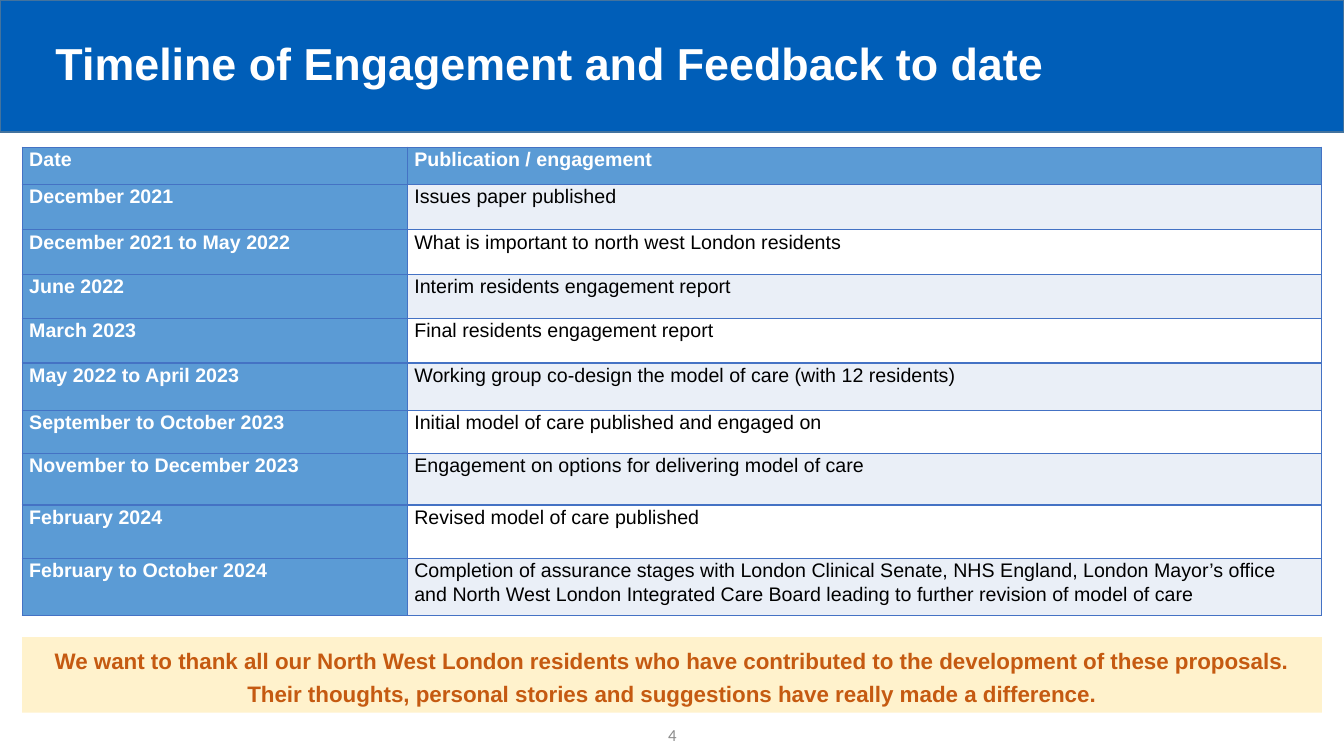
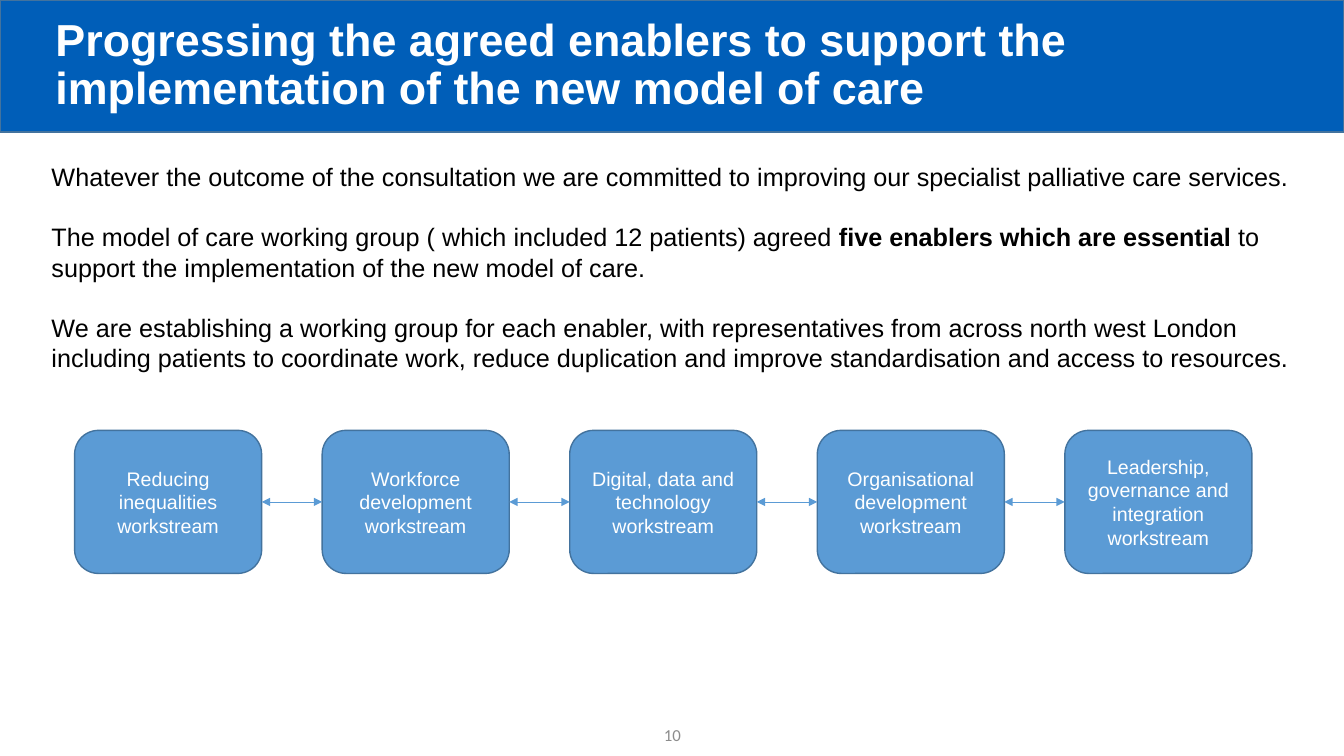
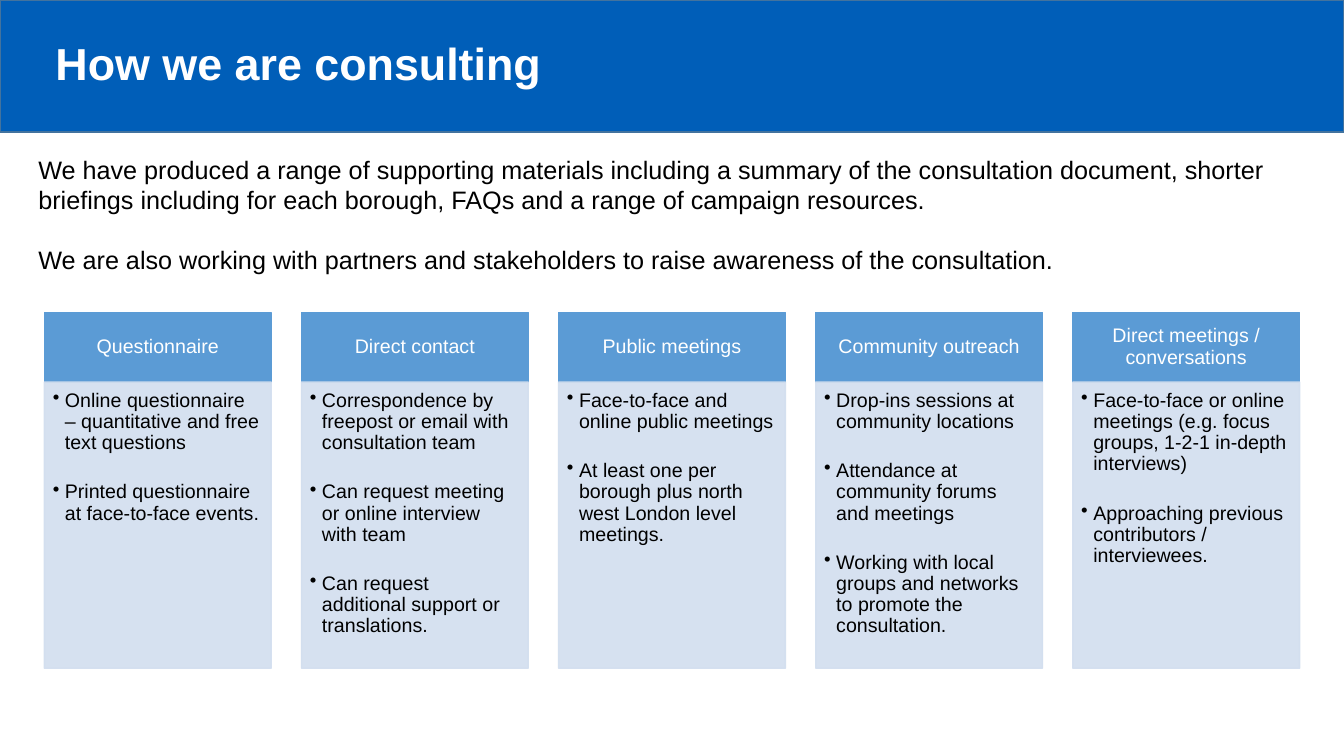
"""Build three slides on a consultation about palliative care."""
from pptx import Presentation
from pptx.dml.color import RGBColor
from pptx.enum.shapes import MSO_CONNECTOR, MSO_SHAPE
from pptx.enum.text import MSO_ANCHOR, MSO_AUTO_SIZE, PP_ALIGN
from pptx.oxml.ns import qn
from pptx.util import Inches, Pt
from lxml.etree import SubElement

WIDE, HIGH = Inches(13.33), Inches(7.5)
INK = {
    "band": "005EB8", "edge": "43739E", "blue": "5B9BD5", "pale": "D2DEEF",
    "stripe": "EAEFF7", "rule": "4472C4", "cream": "FFF2CC", "rust": "C55A11",
    "grey": "8C8C8C", "white": "FFFFFF", "black": "000000",
}
EVENTS = [
    ("Date", "Publication / engagement", 4.93),
    ("December 2021", "Issues paper published", 6),
    ("December 2021 to May 2022", "What is important to north west London residents", 5.87),
    ("June 2022", "Interim residents engagement report", 5.87),
    ("March 2023", "Final residents engagement report", 5.87),
    ("May 2022 to April 2023", "Working group co-design the model of care (with 12 residents)", 6.27),
    ("September to October 2023", "Initial model of care published and engaged on", 5.73),
    ("November to December 2023", "Engagement on options for delivering model of care", 6.8),
    ("February 2024", "Revised model of care published", 7.07),
    ("February to October 2024", "Completion of assurance stages with London Clinical Senate, NHS England, "
     "London Mayor’s office and North West London Integrated Care Board leading to further revision "
     "of model of care", 7.6),
]
THANKS = ("We want to thank all our North West London residents who have contributed to the development "
          "of these proposals. Their thoughts, personal stories and suggestions have really made a difference.")
AIMS = [
    "Whatever the outcome of the consultation we are committed to improving our specialist palliative "
    "care services.",
    "The model of care working group ( which included 12 patients) agreed *five enablers which are "
    "essential *to support the implementation of the new model of care.",
    "We are establishing a working group for each enabler, with representatives from across north west "
    "London including patients to coordinate work, reduce duplication and improve standardisation and "
    "access to resources.",
]
STREAMS = ["Reducing inequalities", "Workforce development", "Digital, data and technology",
           "Organisational development", "Leadership, governance and integration"]
REACH = [
    "We have produced a range of supporting materials including a summary of the consultation document, "
    "shorter briefings including for each borough, FAQs and a range of campaign resources.",
    "We are also working with partners and stakeholders to raise awareness of the consultation.",
]
WAYS = {
    "Questionnaire": ["Online questionnaire – quantitative and free text questions",
                      "Printed questionnaire at face-to-face events."],
    "Direct contact": ["Correspondence by freepost or email with consultation team",
                       "Can request meeting or online interview with team",
                       "Can request additional support or translations."],
    "Public meetings": ["Face-to-face and online public meetings",
                        "At least one per borough plus north west London level meetings."],
    "Community outreach": ["Drop-ins sessions at community locations",
                           "Attendance at community forums and meetings",
                           "Working with local groups and networks to promote the consultation."],
    "Direct meetings / conversations": ["Face-to-face or online meetings (e.g. focus groups, 1-2-1 "
                                        "in-depth interviews)",
                                        "Approaching previous contributors / interviewees."],
}


def tint(name):
    return RGBColor.from_string(INK[name])


def area(x, y, w, h):
    """Turn percentages of the slide into lengths."""
    return [int(WIDE * x / 100), int(HIGH * y / 100), int(WIDE * w / 100), int(HIGH * h / 100)]


def place(item, spot):
    item.left, item.top, item.width, item.height = area(*spot)


def pad(item, left, top, right, low):
    item.margin_left, item.margin_top = Pt(left), Pt(top)
    item.margin_right, item.margin_bottom = Pt(right), Pt(low)


def mark(para, dot):
    """Give a paragraph a bullet, or none."""
    props = para._p.get_or_add_pPr()
    step = Inches(0.12) if dot else 0
    props.set("marL", str(step))
    props.set("indent", str(-step))
    if dot:
        SubElement(props, qn("a:buChar")).set("char", "•")
    else:
        SubElement(props, qn("a:buNone"))


def write(frame, lines, size, ink, bold=False, align=PP_ALIGN.LEFT, space=1.0, gap=0,
          dot=False, face="Arial"):
    """Fill a frame with paragraphs; stars enclose bold words."""
    frame.text = "\n".join(lines)
    frame.word_wrap = True
    for row, (para, line) in enumerate(zip(frame.paragraphs, lines)):
        para.clear()
        mark(para, dot)
        para.alignment, para.line_spacing = align, space
        para.space_before, para.space_after = Pt(gap if row else 0), Pt(0)
        font = para.font
        font.name, font.size, font.bold = face, Pt(size), bold
        font.color.rgb = tint(ink)
        for turn, part in enumerate(line.split("*")):
            run = para.add_run()
            run.text = part
            if turn % 2:
                run.font.bold = True


def block(slide, kind, spot, fill, edge):
    shape = slide.shapes.add_shape(kind, *area(*spot))
    shape.shadow.inherit = False
    shape.fill.solid()
    shape.fill.fore_color.rgb = tint(fill)
    shape.line.color.rgb = tint(edge)
    shape.line.width = Pt(1)
    return shape


def fade(shape, share):
    """Make the fill and line of a shape partly opaque."""
    for node in shape.element.spPr.iter(qn("a:srgbClr")):
        SubElement(node, qn("a:alpha")).set("val", str(share * 1000))


def begin(deck, title, page=None):
    """Add a slide with its title and page number."""
    slide = deck.slides.add_slide(deck.slide_layouts[1])
    frame = slide.shapes.title.text_frame
    write(frame, [title], 32, "white", bold=True, space=0.9)
    frame.auto_size = MSO_AUTO_SIZE.NONE
    frame.vertical_anchor = MSO_ANCHOR.MIDDLE
    if page:
        foot = slide.shapes.add_textbox(*area(38.78, 94.53, 22.5, 5.33)).text_frame
        write(foot, [page], 12, "grey", align=PP_ALIGN.CENTER, face="Calibri")
        foot.vertical_anchor = MSO_ANCHOR.MIDDLE
    return slide


def brand(deck, slide):
    """Put the band and the title's place on the shared layout."""
    layout = deck.slide_layouts[1]
    head = layout.placeholders[0]
    place(head, (3.38, 4.8, 93.32, 7.87))
    band = block(slide, MSO_SHAPE.RECTANGLE, (0, 0, 100, 17.47), "band", "edge")
    band.element.nvSpPr.cNvPr.set("id", "20")
    head.element.getparent().insert(2, band.element)


def body(slide, spot, lines, size, ink, **style):
    """Fill the body placeholder."""
    item = slide.placeholders[1]
    place(item, spot)
    write(item.text_frame, lines, size, ink, **style)
    item.text_frame.auto_size = MSO_AUTO_SIZE.NONE
    return item


def frame_cell(cell):
    """Rule all four sides of a cell."""
    props = cell._tc.get_or_add_tcPr()
    for side in ("lnL", "lnR", "lnT", "lnB"):
        line = SubElement(props, qn("a:" + side), w=str(Pt(1)))
        fill = SubElement(line, qn("a:solidFill"))
        SubElement(fill, qn("a:srgbClr")).set("val", INK["rule"])


def grid(slide, spot, cols, rows):
    """Draw a table with blue heads and striped rows."""
    table = slide.shapes.add_table(len(rows), len(cols), *area(*spot)).table
    table.first_row = table.horz_banding = False
    for col, share in zip(table.columns, cols):
        col.width = int(WIDE * share / 100)
    for down, (*texts, tall) in enumerate(rows):
        table.rows[down].height = int(HIGH * tall / 100)
        for over, text in enumerate(texts):
            cell = table.cell(down, over)
            head = down == 0 or over == 0
            frame_cell(cell)
            cell.fill.solid()
            cell.fill.fore_color.rgb = tint("blue" if head else "stripe" if down % 2 else "white")
            pad(cell, 5, 0, 5, 0)
            write(cell.text_frame, [text], 14, "white" if head else "black", bold=head, space=1.07)


def link(slide, left, right):
    """Join two boxes with a double arrow."""
    line = slide.shapes.add_connector(MSO_CONNECTOR.STRAIGHT, 0, 0, 0, 0)
    line.begin_connect(left, 3)
    line.end_connect(right, 1)
    line.line.color.rgb = tint("blue")
    line.line.width = Pt(0.5)
    for end in ("headEnd", "tailEnd"):
        SubElement(line.line._get_or_add_ln(), qn("a:" + end)).set("type", "triangle")
    SubElement(line.element.spPr, qn("a:effectLst"))


def chain(slide, names):
    """Draw a row of linked boxes."""
    boxes = []
    for turn, name in enumerate(names):
        box = block(slide, MSO_SHAPE.ROUNDED_RECTANGLE, (5.55 + 18.42 * turn, 56.93, 13.92, 18.93),
                    "blue", "edge")
        write(box.text_frame, [name + " workstream"], 14, "white", align=PP_ALIGN.CENTER)
        boxes.append(box)
    for left, right in zip(boxes, boxes[1:]):
        link(slide, left, right)


def panels(slide, ways):
    """Draw headed columns of bullets."""
    for turn, (name, points) in enumerate(ways.items()):
        x = 3.3 + 19.13 * turn
        head = block(slide, MSO_SHAPE.RECTANGLE, (x, 41.33, 16.88, 9.2), "blue", "blue")
        pad(head.text_frame, 8, 4, 8, 4)
        write(head.text_frame, [name], 14, "white", align=PP_ALIGN.CENTER, space=0.9)
        panel = block(slide, MSO_SHAPE.RECTANGLE, (x, 50.53, 16.88, 37.87), "pale", "pale")
        fade(panel, 90)
        pad(panel.text_frame, 6, 6, 8, 9)
        panel.text_frame.vertical_anchor = MSO_ANCHOR.TOP
        write(panel.text_frame, points, 14, "black", space=0.9, gap=20, dot=True)


def main():
    deck = Presentation()
    deck.slide_width, deck.slide_height = WIDE, HIGH

    slide = begin(deck, "Timeline of Engagement and Feedback to date", "4")
    brand(deck, slide)
    grid(slide, (1.65, 19.47, 96.7, 62), (28.66, 68.04), EVENTS)
    note = body(slide, (1.65, 84.27, 96.7, 10), [THANKS], 16, "rust", bold=True,
                align=PP_ALIGN.CENTER, space=1.2)
    note.fill.solid()
    note.fill.fore_color.rgb = tint("cream")

    slide = begin(deck, "Progressing the agreed enablers to support the implementation of the new "
                  "model of care", "10")
    body(slide, (3.08, 20.67, 93.62, 29.6), AIMS, 18, "black", gap=21.5)
    chain(slide, STREAMS)

    slide = begin(deck, "How we are consulting")
    body(slide, (2.1, 19.73, 95.05, 21.6), REACH, 18, "black", gap=21.5)
    panels(slide, WAYS)

    deck.save("out.pptx")


if __name__ == "__main__":
    main()
